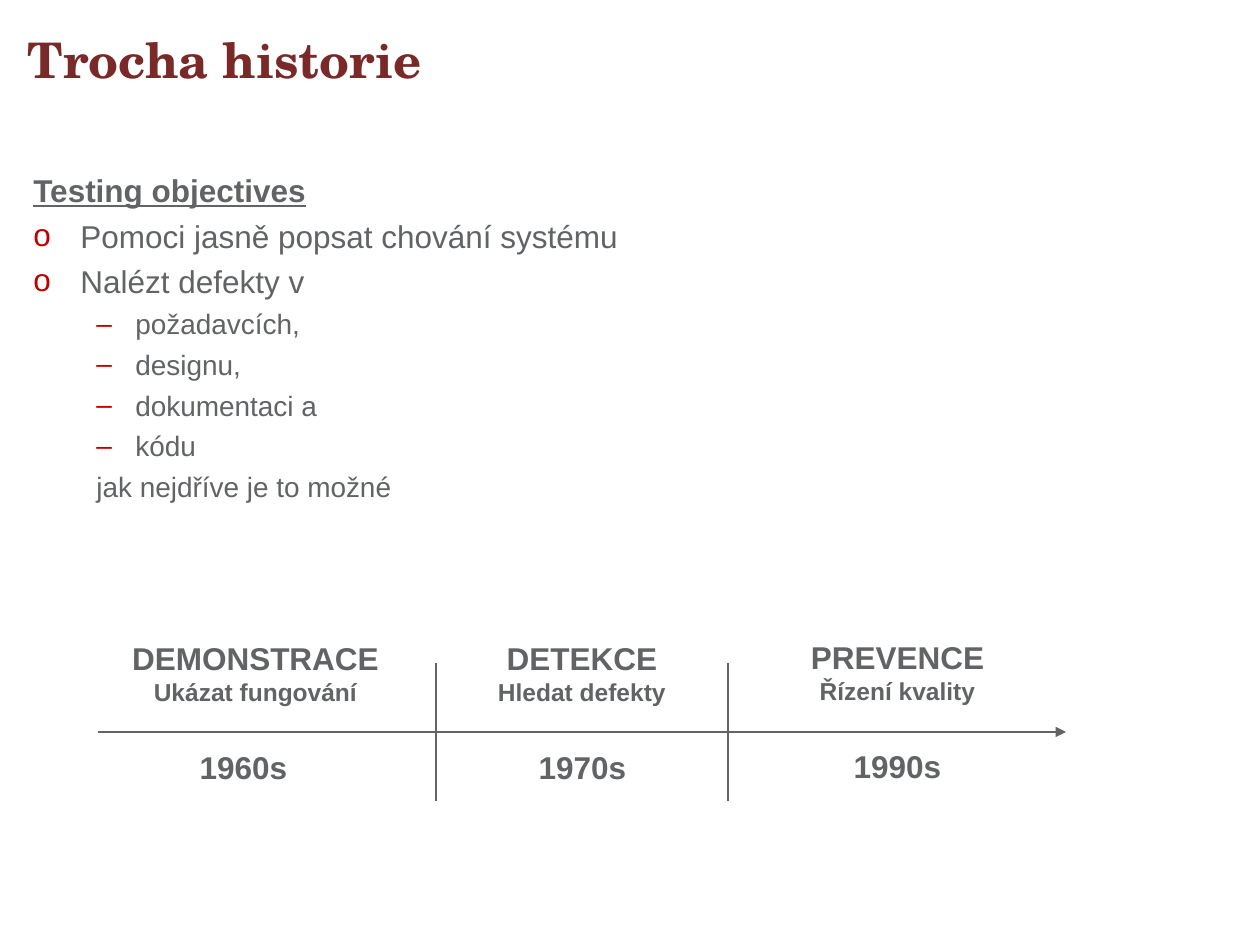
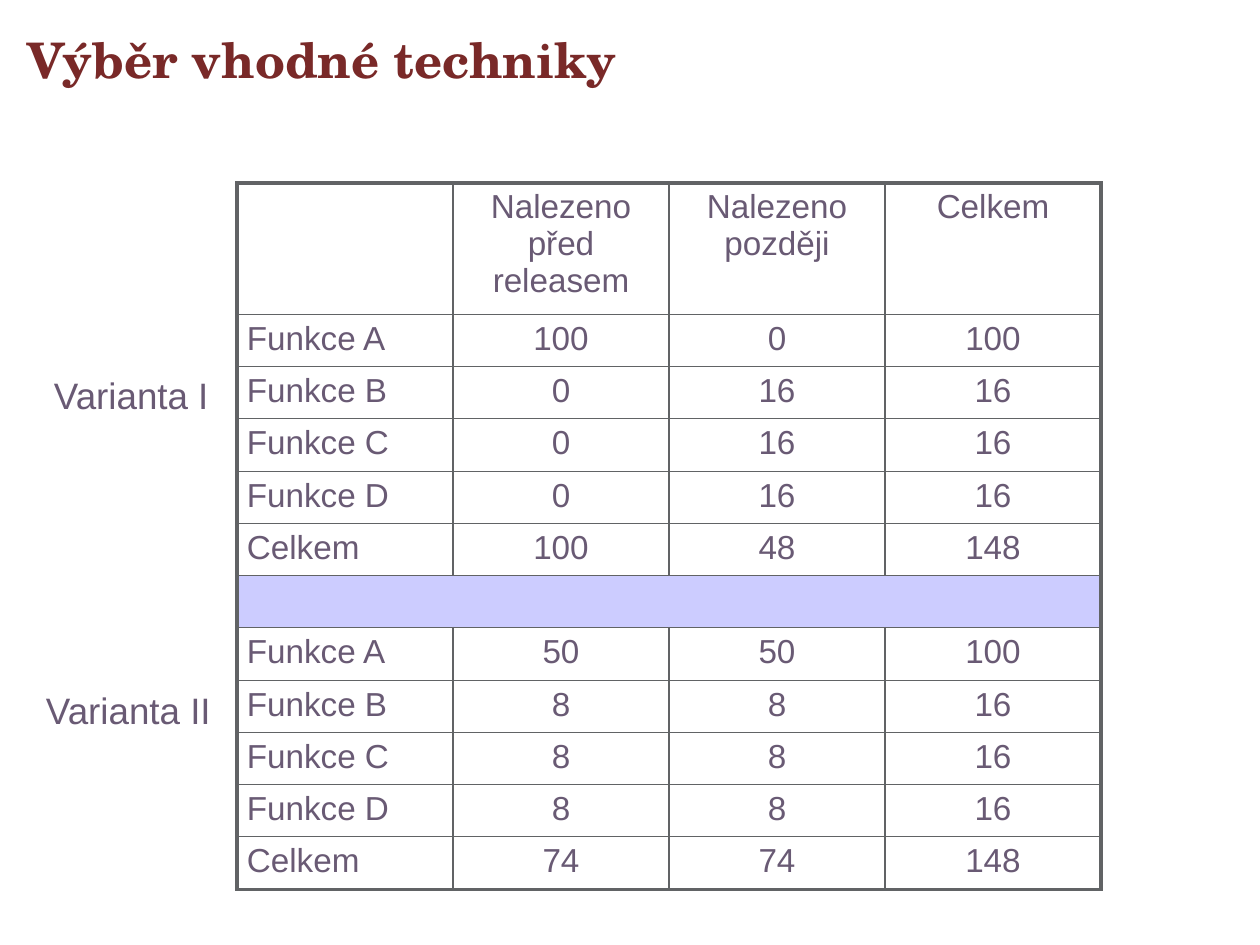
from lxml import etree
from pptx import Presentation
from pptx import util as u
from pptx.dml.color import RGBColor
from pptx.enum import shapes, text
from pptx.oxml.ns import qn

PX = 914400 / 126
GREY, WINE, PLUM, RED, LILAC = "616365", "792928", "695A74", "C00000", "CCCCFF"
MID = text.PP_ALIGN.CENTER


def px(n):
    return u.Emu(round(n * PX))


def write(para, words, size, color, bold=False, face="Arial", align=None):
    run = para.add_run()
    run.text = words
    run.font.size = u.Pt(size)
    run.font.name = face
    run.font.bold = bold
    run.font.color.rgb = RGBColor.from_string(color)
    para.alignment = align
    return run


deck = Presentation()
deck.slide_width, deck.slide_height = px(1260), px(945)

pages = []
for title in ["Trocha historie", "Výběr vhodné techniky"]:
    page = deck.slides.add_slide(deck.slide_layouts[6])
    frame = page.shapes.add_textbox(px(15), px(16), px(1062), px(85)).text_frame
    frame.word_wrap = True
    frame.vertical_anchor = text.MSO_ANCHOR.MIDDLE
    write(frame.paragraphs[0], title, 28, WINE, True, "TeX Gyre Schola")
    pages.append(page)
past, choice = pages

goals = [
    ("Testing objectives", 0, None),
    ("Pomoci jasně popsat chování systému", 0, "o"),
    ("Nalézt defekty v", 0, "o"),
    ("požadavcích,", 1, "–"),
    ("designu,", 1, "–"),
    ("dokumentaci a", 1, "–"),
    ("kódu", 1, "–"),
    ("jak nejdříve je to možné", 1, None),
]
frame = past.shapes.add_textbox(px(21), px(165), px(1201), px(724)).text_frame
frame.word_wrap = True
for i, (words, level, mark) in enumerate(goals):
    para = frame.add_paragraph() if i else frame.paragraphs[0]
    para.level = level
    props = para._p.get_or_add_pPr()
    left, hang = [(47, 47), (102, 39)][level]
    props.set("marL", str(px(left)))
    props.set("indent", str(-px(hang)))
    if mark:
        tint = etree.SubElement(props, qn("a:buClr"))
        etree.SubElement(tint, qn("a:srgbClr"), val=RED)
        etree.SubElement(props, qn("a:buFont"), typeface="Arial")
        etree.SubElement(props, qn("a:buChar"), char=mark)
    else:
        etree.SubElement(props, qn("a:buNone"))
    if i:
        para.space_before = u.Pt([4.4, 4][level])
    run = write(para, words, [18, 16][level], GREY, i == 0)
    run.font.underline = i == 0

line = past.shapes.add_group_shape().shapes
for x1, y1, x2, y2 in [(98, 732, 1066, 732), (436, 663, 436, 801), (728, 663, 728, 801)]:
    rule = line.add_connector(shapes.MSO_CONNECTOR.STRAIGHT, px(x1), px(y1), px(x2), px(y2))
    rule.line.color.rgb = RGBColor.from_string(GREY)
    rule.line.width = u.Pt(0.75)
    etree.SubElement(rule._element.spPr, qn("a:effectLst"))
    if y1 == y2:
        etree.SubElement(rule.line._get_or_add_ln(), qn("a:tailEnd"), type="triangle")

eras = [
    (86, 633, 339, [("DEMONSTRACE", 18), ("Ukázat fungování", 14)]),
    (74, 742, 339, [("1960s", 18)]),
    (436, 633, 292, [("DETEKCE", 18), ("Hledat defekty", 14)]),
    (425, 742, 315, [("1970s", 18)]),
    (728, 632, 339, [("PREVENCE", 18), ("Řízení kvality", 14)]),
    (740, 741, 315, [("1990s", 18)]),
]
for x, y, wide, rows in eras:
    frame = line.add_textbox(px(x), px(y), px(wide), px(50 if len(rows) == 1 else 81)).text_frame
    frame.word_wrap = True
    for i, (words, size) in enumerate(rows):
        para = frame.add_paragraph() if i else frame.paragraphs[0]
        write(para, words, size, GREY, True, align=MID)

data = [
    ["", "Nalezeno před releasem", "Nalezeno později", "Celkem"],
    ["Funkce A", "100", "0", "100"],
    ["Funkce B", "0", "16", "16"],
    ["Funkce C", "0", "16", "16"],
    ["Funkce D", "0", "16", "16"],
    ["Celkem", "100", "48", "148"],
    ["", "", "", ""],
    ["Funkce A", "50", "50", "100"],
    ["Funkce B", "8", "8", "16"],
    ["Funkce C", "8", "8", "16"],
    ["Funkce D", "8", "8", "16"],
    ["Celkem", "74", "74", "148"],
]
GAP, END = 6, len(data) - 1
grid = choice.shapes.add_table(len(data), 4, px(237), px(183), px(865), px(698)).table
grid.first_row = grid.horz_banding = False
for col in grid.columns:
    col.width = px(216)
grid.cell(GAP, 0).merge(grid.cell(GAP, 3))
for r, row in enumerate(data):
    grid.rows[r].height = px(52 + (r % 4 == 3) if r else 123)
    for c, words in enumerate(row):
        cell = grid.cell(r, c)
        cell.margin_left = cell.margin_right = px(10)
        cell.margin_top = cell.margin_bottom = px(6)
        props = cell._tc.get_or_add_tcPr()
        edges = [("L", c == 0), ("R", c == 3 or r == GAP), ("T", r == 0), ("B", r == END)]
        for side, thick in edges:
            if cell.is_spanned:
                continue
            edge = etree.SubElement(props, qn("a:ln" + side), w=str(u.Pt(2.25 if thick else 1)))
            paint = etree.SubElement(edge, qn("a:solidFill"))
            etree.SubElement(paint, qn("a:srgbClr"), val=GREY)
        if r == GAP:
            cell.fill.solid()
            cell.fill.fore_color.rgb = RGBColor.from_string(LILAC)
        else:
            cell.fill.background()
        if words:
            write(cell.text_frame.paragraphs[0], words, 19, PLUM, align=MID if c else None)

for words, x, y, wide in [("Varianta I", 43, 368, 179), ("Varianta II", 35, 683, 189)]:
    frame = choice.shapes.add_textbox(px(x), px(y), px(wide), px(55)).text_frame
    frame.word_wrap = False
    frame.margin_left = frame.margin_right = px(11)
    frame.margin_top = frame.margin_bottom = px(5)
    write(frame.paragraphs[0], words, 21, PLUM)

deck.save("out.pptx")
